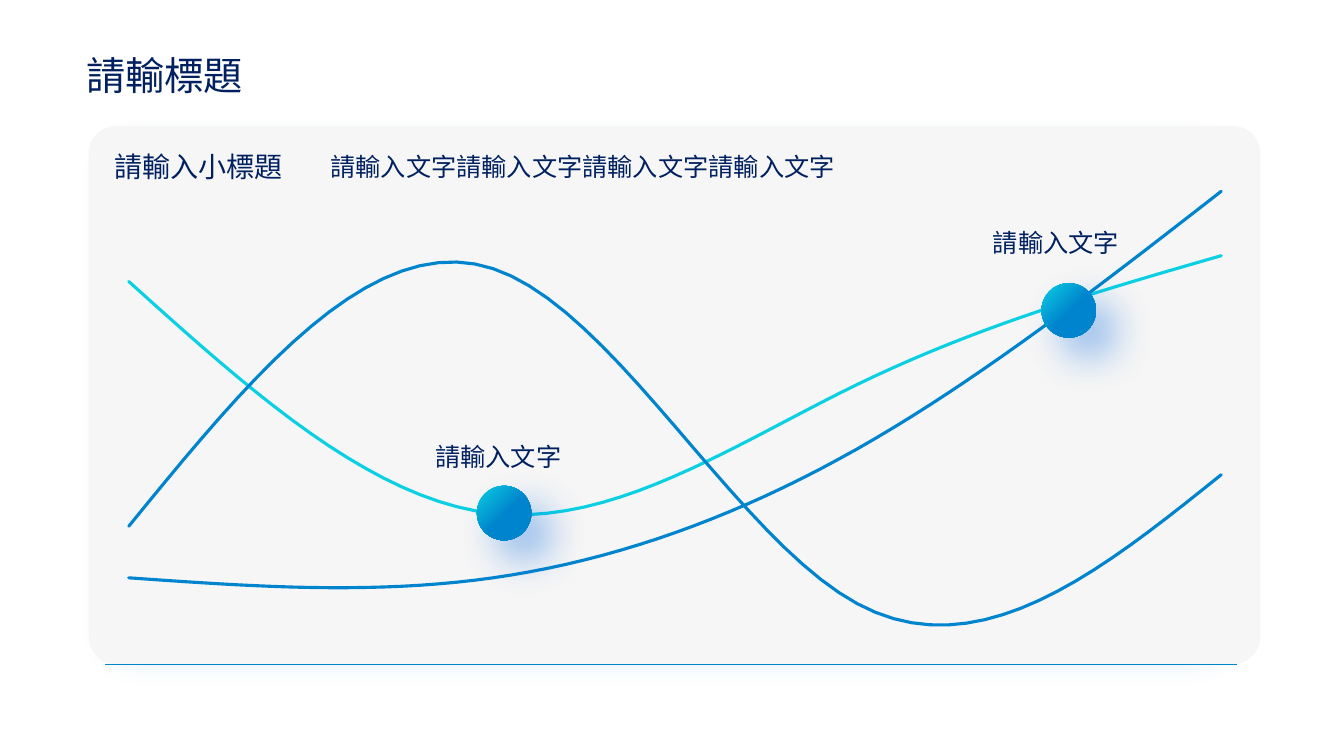
from copy import deepcopy

from pptx import Presentation
from pptx.chart.data import CategoryChartData
from pptx.dml.color import RGBColor
from pptx.enum.chart import XL_CHART_TYPE as ChartType, XL_MARKER_STYLE as MarkerStyle
from pptx.enum.shapes import MSO_CONNECTOR as Connector, MSO_SHAPE as Preset
from pptx.enum.text import MSO_AUTO_SIZE as AutoSize
from pptx.oxml import parse_xml
from pptx.oxml.ns import nsdecls, qn
from pptx.util import Inches, Pt

NAVY = RGBColor(0x00, 0x20, 0x60)
BLUE = RGBColor(0x00, 0x84, 0xCD)
CYAN = RGBColor(0x0B, 0xD0, 0xE3)
GLOW = RGBColor(0x08, 0x68, 0xDE)
PANEL = RGBColor(0xF6, 0xF6, 0xF6)
HEADING_FONT = "Noto Sans CJK SC"
BODY_FONT = "Arial"
BALL_SIZE = 0.54
CURVES = [
    ("Series 1", (86, 50, 70, 90), CYAN),
    ("Series 2", (48, 88, 36, 56), BLUE),
    ("Series 3", (40, 40, 60, 100), BLUE),
]
PLOT_AREA = {"x": 0.02, "y": 0.02, "w": 0.96, "h": 0.96}


def apply(target, values):
    for name, value in values.items():
        setattr(target, name, value)


class SlideBuilder:
    def __init__(self, slide):
        self.slide = slide
        self.shapes = slide.shapes
        self.font = {"name": BODY_FONT, "size": Pt(18)}

    def text(self, box, words, wrap=True, **font):
        shape = self.shapes.add_textbox(*map(Inches, box))
        apply(shape.text_frame, {"word_wrap": wrap, "auto_size": AutoSize.SHAPE_TO_FIT_TEXT})
        run = shape.text_frame.paragraphs[0].add_run()
        run.text = words
        apply(run.font, {**self.font, **font})
        run.font.color.rgb = NAVY
        east_asian = parse_xml(f'<a:ea {nsdecls("a")} typeface="{HEADING_FONT}"/>')
        run.font._element.find(qn("a:latin")).addnext(east_asian)

    def shape(self, preset, box):
        shape = self.shapes.add_shape(preset, *map(Inches, box))
        shape.line.fill.background()
        return shape

    def shadow(self, shape, color, opacity, blur, distance, scale=100):
        shape.shadow.inherit = False
        shape._element.spPr.find(qn("a:effectLst")).append(parse_xml(
            f'<a:outerShdw {nsdecls("a")} blurRad="{Pt(blur)}" dist="{Pt(distance)}" dir="2700000" '
            f'sx="{scale * 1000}" sy="{scale * 1000}" algn="tl" rotWithShape="0">'
            f'<a:srgbClr val="{color}"><a:alpha val="{opacity * 1000}"/></a:srgbClr></a:outerShdw>'))

    def panel(self, box):
        shape = self.shape(Preset.ROUNDED_RECTANGLE, box)
        shape.adjustments[0] = 0.051
        shape.fill.solid()
        shape.fill.fore_color.rgb = PANEL
        self.shadow(shape, BLUE, 20, 22, 21, scale=95)

    def ball(self, left, top):
        shape = self.shape(Preset.OVAL, (left, top, BALL_SIZE, BALL_SIZE))
        shape.fill.gradient()
        shape.fill.gradient_angle = 315
        stop_list = shape._element.spPr.find(".//" + qn("a:gsLst"))
        stop_list.append(deepcopy(stop_list[-1]))
        stops = [(0, CYAN), (0.53, BLUE), (1, BLUE)]
        for stop, (position, color) in zip(shape.fill.gradient_stops, stops):
            stop.position = position
            stop.color.rgb = color
        self.shadow(shape, GLOW, 44, 30, 20)

    def line(self, start, end):
        connector = self.shapes.add_connector(Connector.STRAIGHT, *map(Inches, start + end))
        connector.line.color.rgb = BLUE
        connector.line.width = Pt(1)
        connector._element.spPr.append(parse_xml(f'<a:effectLst {nsdecls("a")}/>'))

    def curves(self, box):
        data = CategoryChartData()
        data.categories = ["1", "2", "3", "4"]
        for name, values, _ in CURVES:
            data.add_series(name, values)
        chart = self.shapes.add_chart(ChartType.LINE, *map(Inches, box), data).chart
        apply(chart, {"has_title": False, "has_legend": False})
        apply(chart.font, {"name": BODY_FONT, "size": Pt(10)})
        chart.font.color.rgb = NAVY
        chart.plots[0].vary_by_categories = False
        chart.category_axis.visible = False
        apply(chart.value_axis, {"visible": False, "has_major_gridlines": False,
                                 "minimum_scale": 0, "maximum_scale": 120})
        for series, (_, _, color) in zip(chart.plots[0].series, CURVES):
            series.smooth = True
            series.marker.style = MarkerStyle.NONE
            series.format.line.color.rgb = color
            series.format.line.width = Pt(2.25)
            series.format.line._ln.set("cap", "rnd")
        self.place_plot(chart)

    def place_plot(self, chart):
        plot_area = chart._chartSpace.chart.plotArea
        for layout in plot_area.findall(qn("c:layout")):
            plot_area.remove(layout)
        sizes = "".join(f'<c:{key} val="{value}"/>' for key, value in PLOT_AREA.items())
        plot_area.insert(0, parse_xml(
            f'<c:layout {nsdecls("c")}><c:manualLayout><c:layoutTarget val="inner"/>'
            f'<c:xMode val="edge"/><c:yMode val="edge"/>{sizes}</c:manualLayout></c:layout>'))


def main():
    presentation = Presentation()
    apply(presentation, {"slide_width": Inches(13.33), "slide_height": Inches(7.5)})
    builder = SlideBuilder(presentation.slides.add_slide(presentation.slide_layouts[6]))
    builder.panel((0.88, 1.25, 11.62, 5.34))
    builder.text((0.76, 0.46, 1.76, 0.57), "請輸標題", wrap=False, name=HEADING_FONT, size=Pt(28))
    builder.line((1.04, 6.59), (12.27, 6.59))
    builder.curves((-0.83, 0.46, 15.05, 7.99))
    builder.text((1.04, 1.43, 2.27, 0.44), "請輸入小標題", name=HEADING_FONT, size=Pt(20))
    builder.text((3.18, 1.45, 5.76, 0.4), "請輸入文字" * 4)
    for ball, label in [((4.73, 4.82), (4.22, 4.33)), ((10.33, 2.81), (9.75, 2.21))]:
        builder.ball(*ball)
        builder.text((*label, 1.7, 0.4), "請輸入文字")
    presentation.save("out.pptx")


if __name__ == "__main__":
    main()
